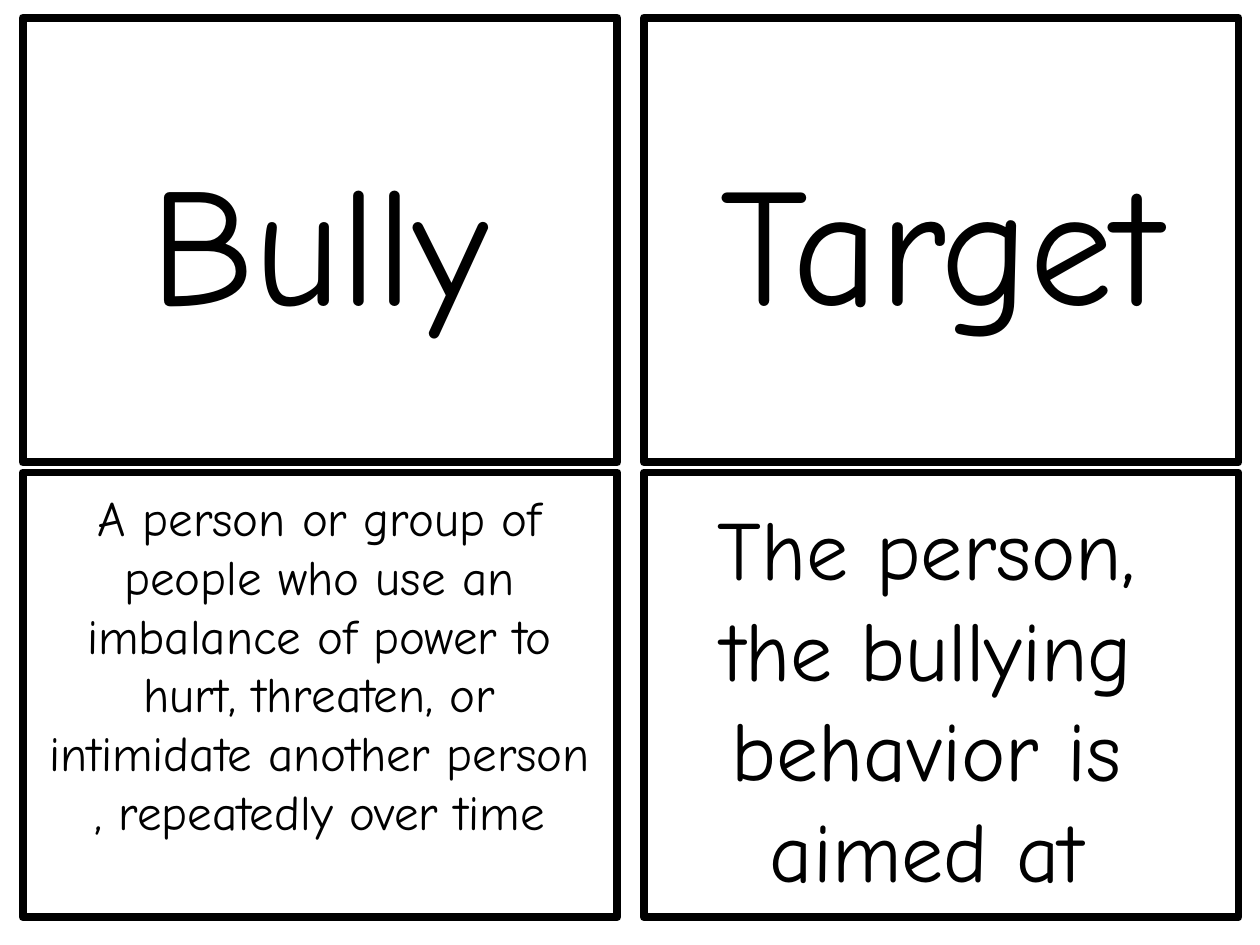
import pptx
import pptx.dml.color
import pptx.enum.shapes
import pptx.enum.text
import pptx.util

Inches = pptx.util.Inches
BLACK = pptx.dml.color.RGBColor(0, 0, 0)
WHITE = pptx.dml.color.RGBColor(255, 255, 255)
FONT = "Comic Neue"

LEFT, TOP = 0.18, 0.14
WIDTH, HEIGHT = 4.72, 3.53
STEP_X, STEP_Y = 4.93, 3.61

TERMS = [
    ("Bully", (0.54, 1.04, 3.99, 1.72)),
    ("Target", (5.22, 1.04, 4.5, 1.72)),
]
MEANINGS = [
    ("A person or group of people who use an imbalance of power to hurt, "
     "threaten, or intimidate another person , repeatedly over time",
     (0.26, 3.82, 4.55, 3.4), 28),
    ("The person, the bullying behavior is aimed at",
     (5.22, 3.89, 4.27, 3.33), 48),
]


def add_card(slide, col, row):
    card = slide.shapes.add_shape(
        pptx.enum.shapes.MSO_SHAPE.RECTANGLE,
        Inches(LEFT + col * STEP_X), Inches(TOP + row * STEP_Y),
        Inches(WIDTH), Inches(HEIGHT))
    card.shadow.inherit = False
    card.fill.solid()
    card.fill.fore_color.rgb = WHITE
    card.line.color.rgb = BLACK
    card.line.width = pptx.util.Pt(4.5)


def add_text(slide, text, box, size=96, color=BLACK,
             align=pptx.enum.text.PP_ALIGN.CENTER):
    frame = slide.shapes.add_textbox(*map(Inches, box)).text_frame
    frame.word_wrap = True
    frame.auto_size = pptx.enum.text.MSO_AUTO_SIZE.SHAPE_TO_FIT_TEXT
    para = frame.paragraphs[0]
    para.alignment = align
    run = para.add_run()
    run.text = text
    run.font.name = FONT
    run.font.size = pptx.util.Pt(size)
    run.font.color.rgb = color


def main():
    deck = pptx.Presentation()
    deck.slide_width, deck.slide_height = Inches(10), Inches(7.5)
    slide = deck.slides.add_slide(deck.slide_layouts[6])
    for col in range(2):
        for row in range(2):
            add_card(slide, col, row)
    for text, box in TERMS:
        add_text(slide, text, box)
    for text, box, size in MEANINGS:
        add_text(slide, text, box, size=size)
    deck.save("out.pptx")


if __name__ == "__main__":
    main()
